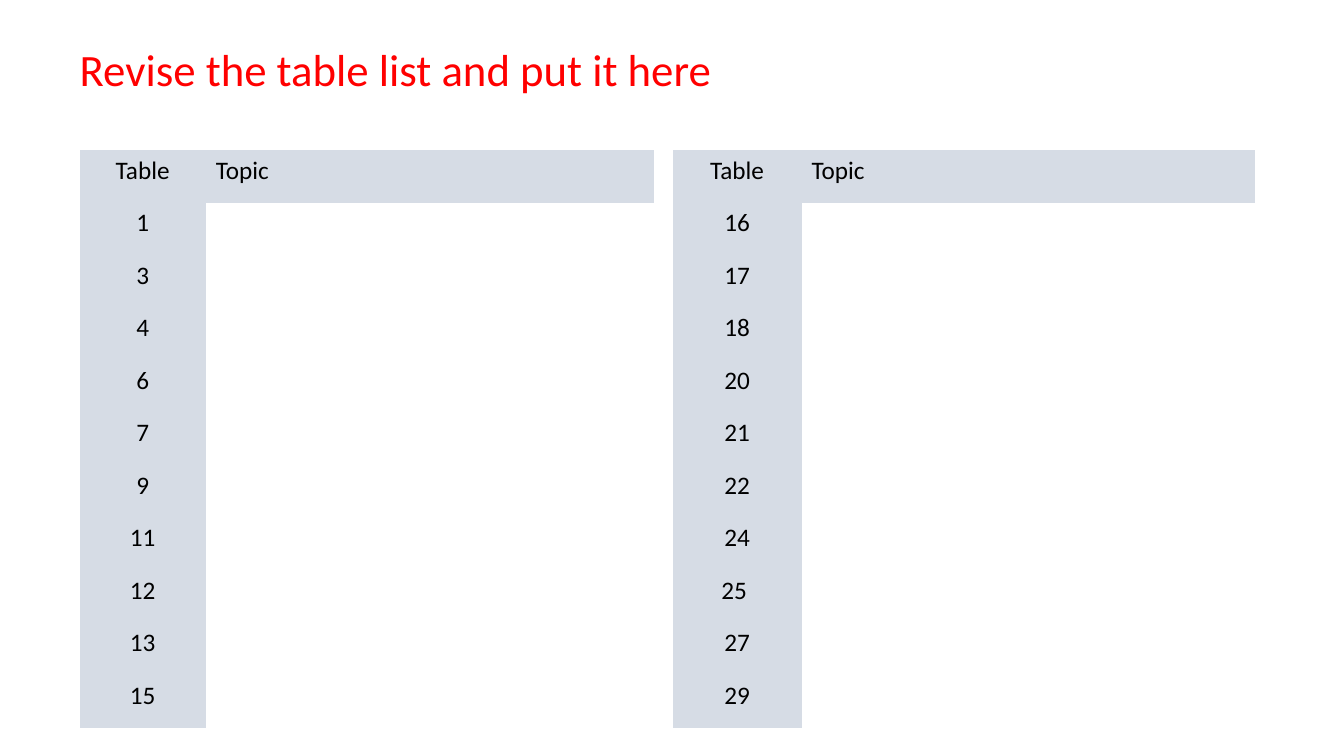
from pptx import Presentation
from pptx.dml.color import RGBColor
from pptx.enum.text import MSO_ANCHOR, PP_ALIGN
from pptx.util import Inches, Pt

LEFT, CENTER = PP_ALIGN.LEFT, PP_ALIGN.CENTER
MIDDLE = MSO_ANCHOR.MIDDLE
TITLE_ONLY = 5
PLAIN_TABLE_STYLE = "{2D5ABB26-0587-4C30-8999-92F81FD0307C}"
COLORS = {"title": "FF0000", "text": "000000", "shade": "D6DCE5"}
TITLE_FONT = {"name": "Calibri", "size": Pt(32), "bold": False}
TABLE_FONT = {"name": "Calibri", "size": Pt(18), "bold": False}
TABLE_TOP, TABLE_HEIGHT = 1.49, 5.73
TABLE_LISTS = [
    (0.79, (1.25, 4.45), ["1", "3", "4", "6", "7", "9", "11", "12", "13", "15"]),
    (6.67, (1.28, 4.5), ["16", "17", "18", "20", "21", "22", "24", "25 ", "27", "29"]),
]


def color(name):
    return RGBColor.from_string(COLORS[name])


def write_text(frame, text, font, color_name, alignment):
    para = frame.paragraphs[0]
    para.alignment = alignment
    span = para.add_run()
    span.text = text
    for key, value in font.items():
        setattr(span.font, key, value)
    span.font.color.rgb = color(color_name)
    return para


def add_title(page, text):
    title = page.shapes.title
    title.left, title.top = Inches(0.69), Inches(0.09)
    title.width, title.height = Inches(9), Inches(1.25)
    title.text_frame.vertical_anchor = MIDDLE
    para = write_text(title.text_frame, text, TITLE_FONT, "title", LEFT)
    para.line_spacing = 0.9


def fill_cell(cell, text, alignment):
    cell.fill.solid()
    cell.fill.fore_color.rgb = color("shade")
    write_text(cell.text_frame, text, TABLE_FONT, "text", alignment)


def add_table_list(page, left, widths, numbers):
    labels = ["Table", *numbers]
    frame = page.shapes.add_table(
        len(labels), len(widths), Inches(left), Inches(TABLE_TOP),
        Inches(sum(widths)), Inches(TABLE_HEIGHT))
    table = frame.table
    table._tbl.tblPr[0].text = PLAIN_TABLE_STYLE
    table.first_row = table.horz_banding = False
    for column, width in zip(table.columns, widths):
        column.width = Inches(width)
    for row, label in enumerate(labels):
        fill_cell(table.cell(row, 0), label, CENTER)
        table.cell(row, 1).fill.background()
    fill_cell(table.cell(0, 1), "Topic", LEFT)


def main():
    deck = Presentation()
    deck.slide_width, deck.slide_height = Inches(13.33), Inches(7.5)
    page = deck.slides.add_slide(deck.slide_layouts[TITLE_ONLY])
    add_title(page, "Revise the table list and put it here")
    for left, widths, numbers in TABLE_LISTS:
        add_table_list(page, left, widths, numbers)
    deck.save("out.pptx")


if __name__ == "__main__":
    main()
